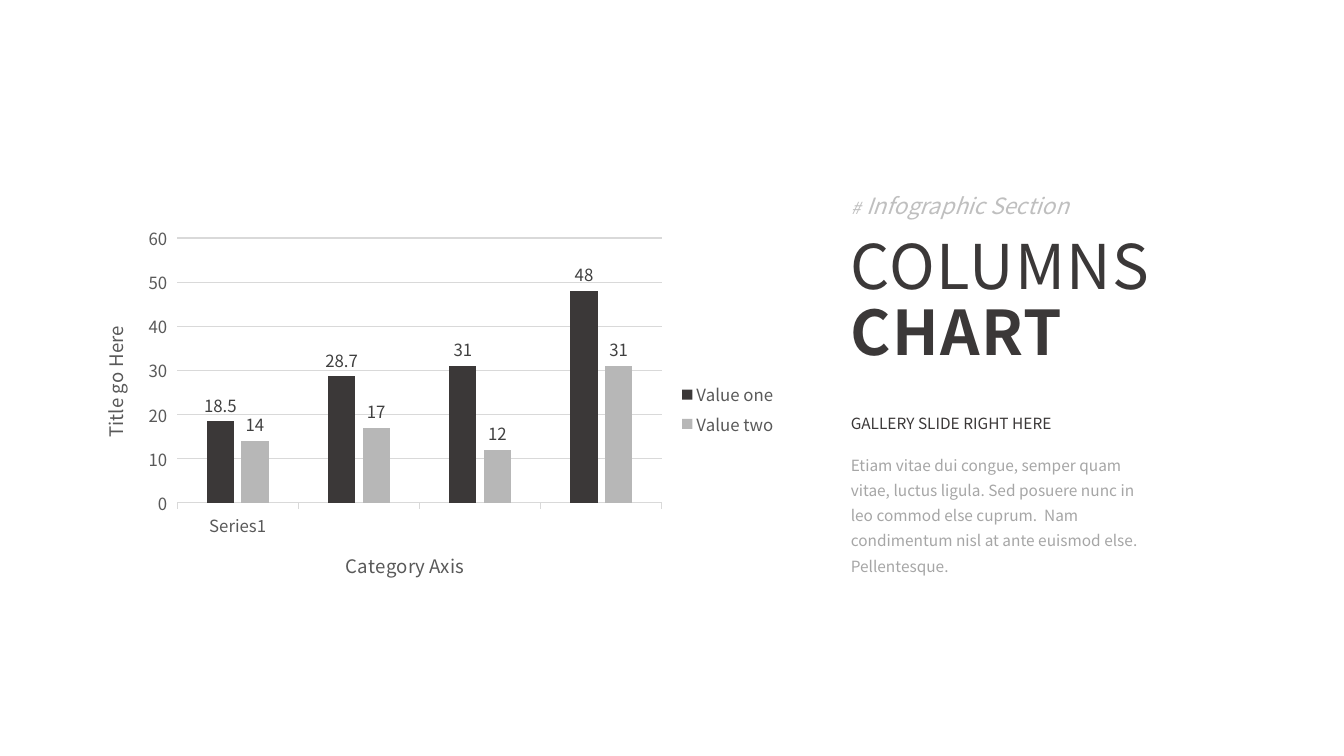
"""Build a slide with a clustered column chart beside its title and text."""
from dataclasses import dataclass
from typing import Any

from lxml import etree
from pptx import Presentation
from pptx import util as u
from pptx.chart import data as cd
from pptx.dml import color
from pptx.enum import chart as ce
from pptx.enum import text as te
from pptx.oxml import ns


@dataclass(frozen=True)
class Theme:
    font: str = "Noto Sans CJK SC"
    dark: str = "3B3838"
    light: str = "B7B7B7"
    tag: str = "BFBFBF"
    body: str = "A6A6A6"
    axis: str = "595959"
    label: str = "404040"
    grid: str = "D9D9D9"
    title_size: float = 44
    tag_size: float = 16
    tag_gap_size: float = 20
    body_size: float = 11
    chart_size: float = 12
    axis_title_size: float = 13.3


@dataclass(frozen=True)
class Run:
    text: str
    size: float
    color: str
    bold: bool = False
    italic: bool = False


@dataclass(frozen=True)
class Box:
    left: float
    top: float
    width: float
    height: float

    def lengths(self) -> tuple[u.Length, ...]:
        return tuple(u.Inches(v) for v in (self.left, self.top, self.width, self.height))


@dataclass(frozen=True)
class Series:
    name: str
    values: tuple[float, ...]
    color: str


T = Theme()
CHART_BOX = Box(0.78, 2.16, 7.03, 3.8)
PLOT = {"x": 0.139, "y": 0.053, "w": 0.684, "h": 0.692}
TITLE_BOX = Box(8.34, 2.29, 4.9, 1.5)
TITLE = [Run("COLUMNS", T.title_size, T.dark), Run("CHART", T.title_size, T.dark, bold=True)]
TEXTS = [
    (Box(8.34, 1.88, 4.33, 0.41), [[
        Run("#", T.chart_size, T.tag, italic=True),
        Run(" ", T.tag_gap_size, T.tag, italic=True),
        Run("Infographic Section", T.tag_size, T.tag, italic=True),
    ]]),
    (Box(8.34, 3.99, 3.13, 2.97), [
        [Run("GALLERY SLIDE RIGHT HERE", T.body_size, T.dark)],
        [Run("Etiam vitae dui congue, semper quam vitae, luctus ligula. Sed posuere "
             "nunc in leo commod else cuprum.  Nam condimentum nisl at ante euismod "
             "else. Pellentesque.", T.body_size, T.body)],
    ]),
]
CATEGORIES = ("Series1", "", "", "")
SERIES = (
    Series("Value one", (18.5, 28.7, 31, 48), T.dark),
    Series("Value two", (14, 17, 12, 31), T.light),
)


def set_all(target: Any, values: dict[str, Any]) -> None:
    for name, value in values.items():
        setattr(target, name, value)


def set_font(font: Any, size: float, rgb: str, bold: bool = False, italic: bool = False) -> None:
    set_all(font, {"name": T.font, "size": u.Pt(size), "bold": bold, "italic": italic})
    font.color.rgb = color.RGBColor.from_string(rgb)


def add_run(p: Any, run: Run) -> Any:
    r = p.add_run()
    r.text = run.text
    set_font(r.font, run.size, run.color, run.bold, run.italic)
    return r


def set_frame(tf: Any) -> None:
    set_all(tf, {"word_wrap": True, "auto_size": te.MSO_AUTO_SIZE.NONE,
                 "vertical_anchor": te.MSO_ANCHOR.TOP})


def add_title(s: Any) -> None:
    sp = s.shapes.title
    set_all(sp, dict(zip(("left", "top", "width", "height"), TITLE_BOX.lengths())))
    set_frame(sp.text_frame)
    p = sp.text_frame.paragraphs[0]
    set_all(p, {"alignment": te.PP_ALIGN.LEFT, "line_spacing": 0.9, "space_before": u.Pt(0)})
    for i, run in enumerate(TITLE):
        if i:
            p.add_line_break()
        add_run(p, run).font._element.set("spc", "100")


def add_text(s: Any, box: Box, paragraphs: list[list[Run]]) -> None:
    tf = s.shapes.add_textbox(*box.lengths()).text_frame
    set_frame(tf)
    for i, runs in enumerate(paragraphs):
        p = tf.add_paragraph() if i else tf.paragraphs[0]
        set_all(p, {"line_spacing": u.Pt(18), "space_before": u.Pt(12)})
        for run in runs:
            add_run(p, run)


def set_line(line: Any) -> None:
    line.color.rgb = color.RGBColor.from_string(T.grid)
    line.width = u.Pt(0.75)


def set_axis(axis: Any, title: str) -> None:
    set_font(axis.tick_labels.font, T.chart_size, T.axis)
    add_run(axis.axis_title.text_frame.paragraphs[0], Run(title, T.axis_title_size, T.axis))


def set_plot_layout(chart: Any) -> None:
    area = chart._chartSpace.chart.plotArea
    for old in area.findall(ns.qn("c:layout")):
        area.remove(old)
    layout = etree.Element(ns.qn("c:layout"))
    manual = etree.SubElement(layout, ns.qn("c:manualLayout"))
    values = {"layoutTarget": "inner", "xMode": "edge", "yMode": "edge", **PLOT}
    for name, value in values.items():
        etree.SubElement(manual, ns.qn(f"c:{name}")).set("val", str(value))
    area.insert(0, layout)


def add_columns(s: Any) -> None:
    data = cd.CategoryChartData()
    data.categories = CATEGORIES
    for series in SERIES:
        data.add_series(series.name, series.values)
    kind = ce.XL_CHART_TYPE.COLUMN_CLUSTERED
    chart = s.shapes.add_chart(kind, *CHART_BOX.lengths(), data).chart
    set_all(chart, {"has_title": False, "has_legend": True})
    set_font(chart.font, T.chart_size, T.axis)
    set_all(chart.legend, {"position": ce.XL_LEGEND_POSITION.RIGHT, "include_in_layout": False})
    set_font(chart.legend.font, T.chart_size, T.axis)
    set_plot_layout(chart)

    set_axis(chart.category_axis, "Category Axis")
    set_line(chart.category_axis.format.line)
    value_axis = chart.value_axis
    set_axis(value_axis, "Title go Here")
    set_all(value_axis, {"minimum_scale": 0, "maximum_scale": 60, "major_unit": 10})
    value_axis.format.line.fill.background()
    set_line(value_axis.major_gridlines.format.line)

    plot = chart.plots[0]
    set_all(plot, {"gap_width": 219, "overlap": -27, "vary_by_categories": False})
    for column, series in zip(plot.series, SERIES):
        column.format.fill.solid()
        column.format.fill.fore_color.rgb = color.RGBColor.from_string(series.color)
        labels = column.data_labels
        set_all(labels, {"show_value": True, "position": ce.XL_LABEL_POSITION.OUTSIDE_END})
        set_font(labels.font, T.chart_size, T.label)


def main() -> None:
    prs = Presentation()
    set_all(prs, {"slide_width": u.Inches(13.33), "slide_height": u.Inches(7.5)})
    s = prs.slides.add_slide(prs.slide_layouts[5])
    add_columns(s)
    for box, paragraphs in TEXTS:
        add_text(s, box, paragraphs)
    add_title(s)
    prs.save("out.pptx")


if __name__ == "__main__":
    main()
